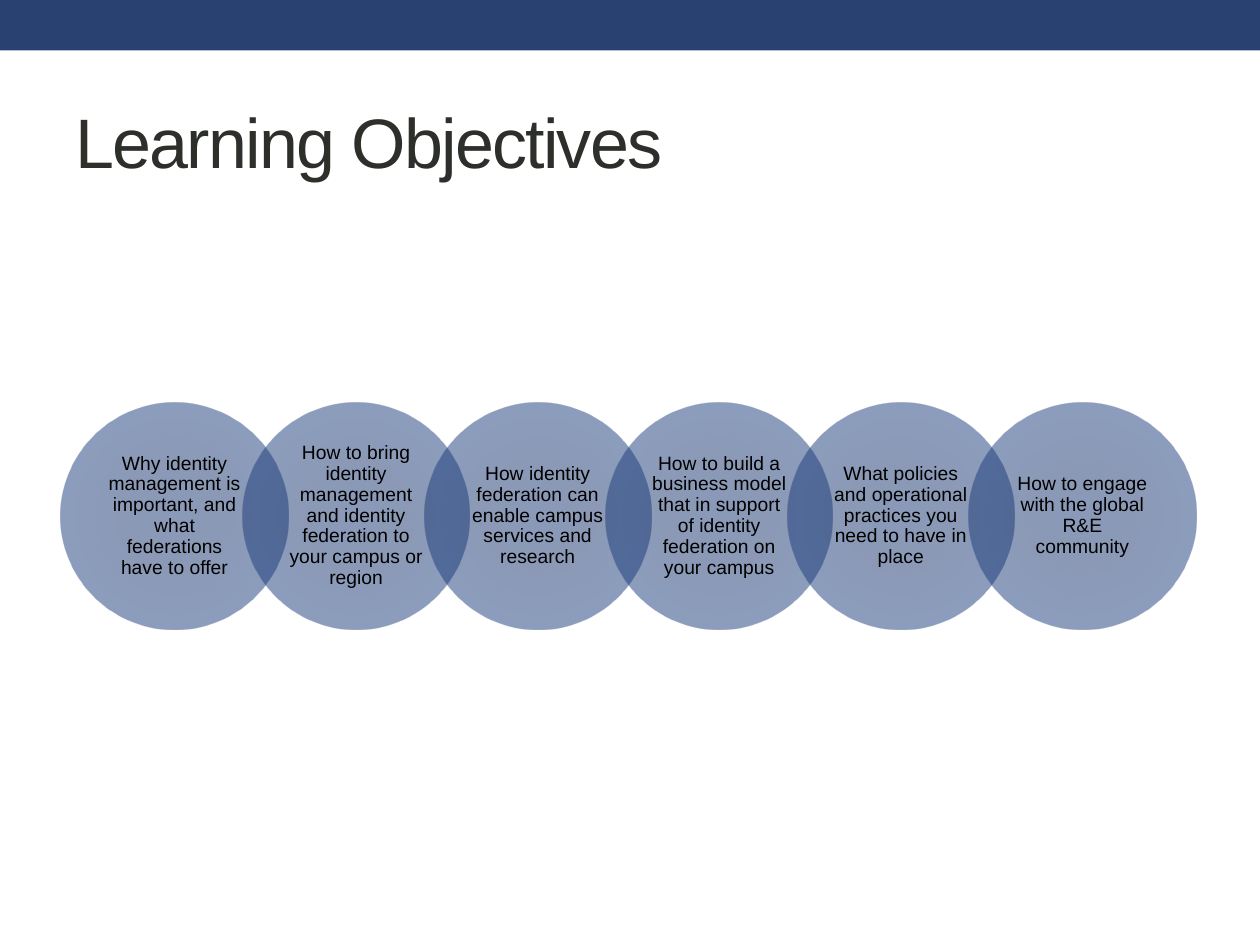
import pptx
import pptx.dml.color
import pptx.enum.shapes
import pptx.enum.text
import pptx.oxml
import pptx.oxml.ns
import pptx.util
from pptx.util import Cm

OBJECTIVES = [
    "Why identity management is important, and what federations have to offer",
    "How to bring identity management and identity federation to your campus or region",
    "How identity federation can enable campus services and research",
    "How to build a business model that in support of identity federation on your campus",
    "What policies and operational practices you need to have in place",
    "How to engage with the global R&E community",
]
CIRCLE_STOPS = [(0, "143370"), (34, "17346D"), (70, "193A7A"), (100, "294171")]


def color(hex_text):
    return pptx.dml.color.RGBColor.from_string(hex_text)


def write(frame, text, size, ink, font="Arial", align="LEFT", line=1.0, tracking=0):
    frame.word_wrap = True
    frame.vertical_anchor = pptx.enum.text.MSO_ANCHOR.MIDDLE
    paragraph = frame.paragraphs[0]
    paragraph.alignment = getattr(pptx.enum.text.PP_ALIGN, align)
    paragraph.line_spacing = line
    run = paragraph.add_run()
    run.text = text
    run.font.name = font
    run.font.size = pptx.util.Pt(size)
    run.font.color.rgb = color(ink)
    if tracking:
        run.font._element.set("spc", str(tracking * 100))


class ObjectivesSlide:
    """Style and current slide for a row of overlapping objective circles."""

    banner_fill = "294171"
    title_ink = "2D2F2B"
    body_ink = "000000"
    opacity = 50

    def __init__(self, slide):
        self.slide = slide

    def banner(self, width, height):
        kind = pptx.enum.shapes.MSO_SHAPE.RECTANGLE
        band = self.slide.shapes.add_shape(kind, 0, 0, width, height)
        band.shadow.inherit = False
        band.fill.solid()
        band.fill.fore_color.rgb = color(self.banner_fill)
        band.line.fill.background()

    def title(self, text, left, top, width, height):
        heading = self.slide.shapes.add_textbox(left, top, width, height)
        write(heading.text_frame, text, 40, self.title_ink, tracking=-1)

    def circle(self, group, left, top, diameter):
        kind = pptx.enum.shapes.MSO_SHAPE.OVAL
        disc = group.shapes.add_shape(kind, left, top, diameter, diameter)
        disc.shadow.inherit = False
        disc.line.fill.background()
        stops = "".join(
            f'<a:gs pos="{place * 1000}"><a:srgbClr val="{shade}">'
            f'<a:alpha val="{self.opacity * 1000}"/></a:srgbClr></a:gs>'
            for place, shade in CIRCLE_STOPS
        )
        gradient = pptx.oxml.parse_xml(
            f'<a:gradFill {pptx.oxml.ns.nsdecls("a")} rotWithShape="1">'
            f'<a:gsLst>{stops}</a:gsLst><a:path path="circle">'
            '<a:fillToRect l="100000" t="100000" r="100000" b="100000"/>'
            "</a:path></a:gradFill>"
        )
        geometry = disc._element.spPr.find(pptx.oxml.ns.qn("a:prstGeom"))
        geometry.addnext(gradient)

    def caption(self, group, text, left, top, side):
        label = group.shapes.add_textbox(left, top, side, side)
        frame = label.text_frame
        frame.margin_top = frame.margin_bottom = Cm(0.05)
        write(frame, text, 11, self.body_ink, align="CENTER", line=0.9)

    def objectives(self, texts, left, top, diameter, pitch, inset):
        group = self.slide.shapes.add_group_shape()
        for index, text in enumerate(texts):
            start = left + index * pitch
            self.circle(group, start, top, diameter)
            self.caption(group, text, start + inset, top + inset, diameter - 2 * inset)


def main():
    deck = pptx.Presentation()
    deck.slide_width = Cm(25.4)
    deck.slide_height = Cm(19.05)
    page = ObjectivesSlide(deck.slides.add_slide(deck.slide_layouts[6]))
    page.banner(deck.slide_width, Cm(1.02))
    page.title("Learning Objectives", Cm(1.27), Cm(1.47), Cm(22.86), Cm(2.74))
    page.objectives(OBJECTIVES, left=Cm(1.23), top=Cm(8.11), diameter=Cm(4.58),
                    pitch=Cm(3.66), inset=Cm(0.67))
    deck.save("out.pptx")


if __name__ == "__main__":
    main()
